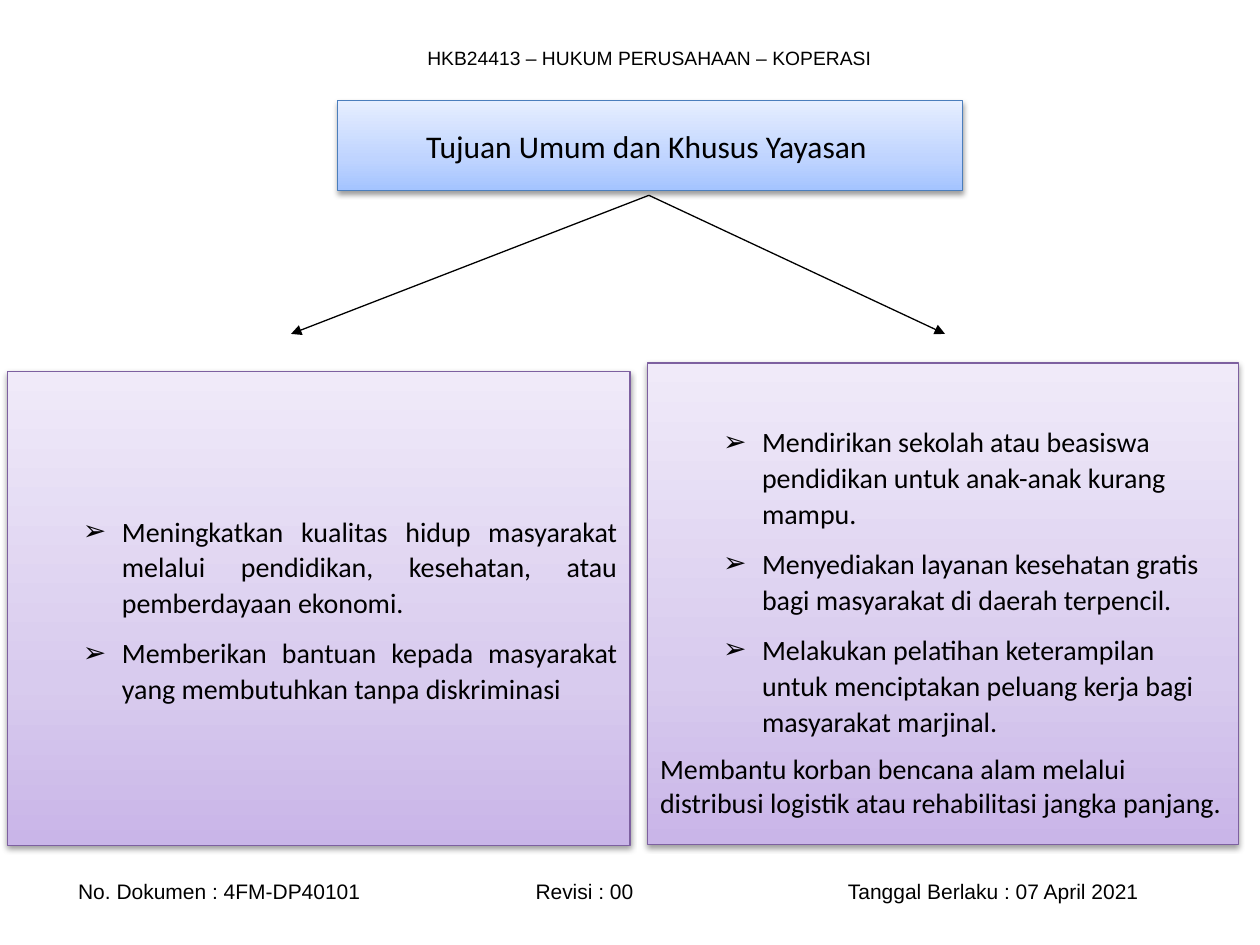
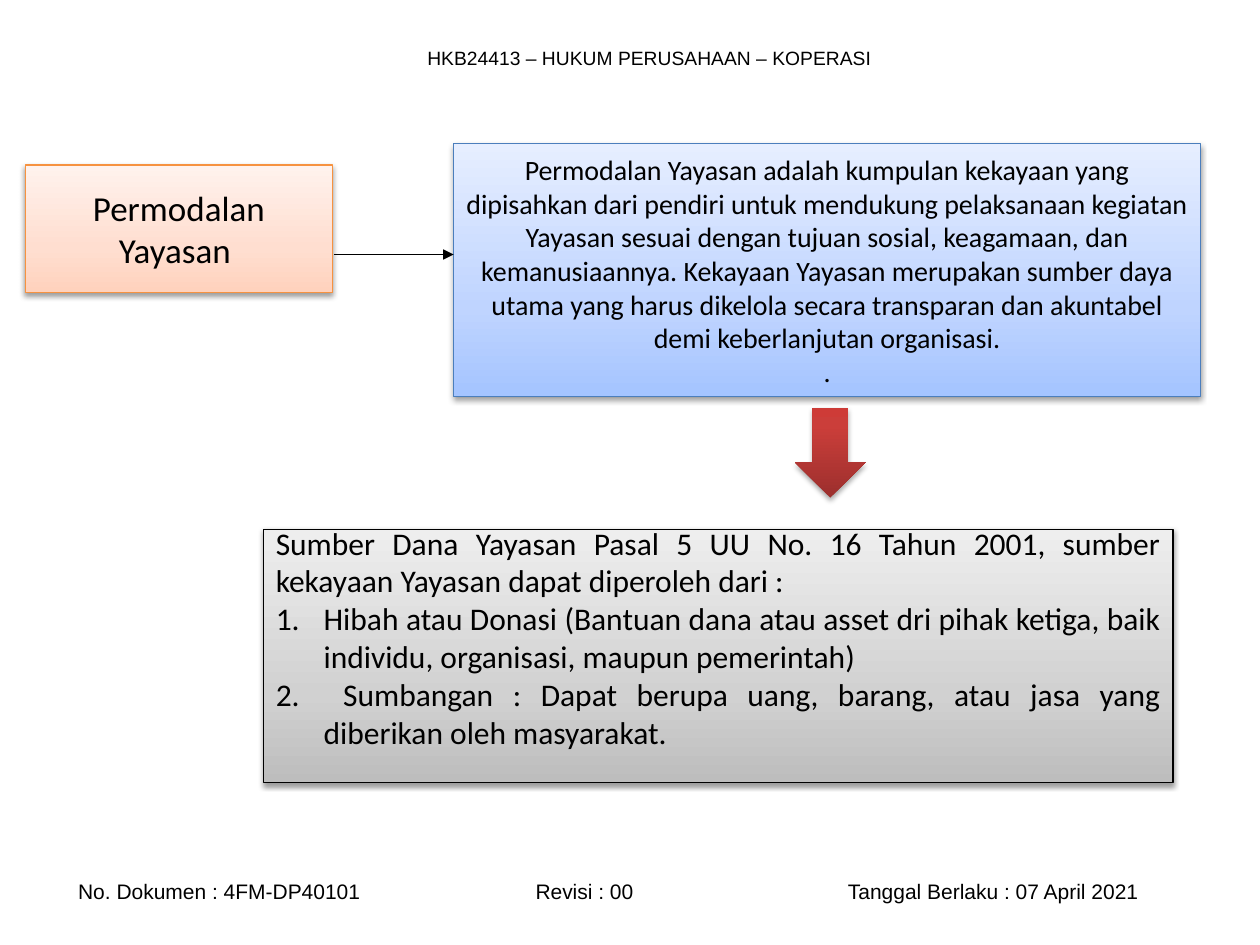
from dataclasses import dataclass
from lxml.etree import SubElement
from pptx import Presentation
from pptx.dml.color import RGBColor
from pptx.enum.shapes import MSO_CONNECTOR, MSO_SHAPE
from pptx.enum.text import MSO_ANCHOR, PP_ALIGN
from pptx.oxml.ns import qn
from pptx.util import Pt

PX = 9144
WIDE, HIGH = 1000, 750


@dataclass(frozen=True)
class Theme:
    ink: str = "000000"
    blue: tuple = ("4B7EBC", ((0, "A4C4FF"), (35, "BFD4FF"), (100, "E6EEFF")))
    mauve: tuple = ("7D60A0", ((0, "C9B5E8"), (35, "D8CBEE"), (100, "F0EAF9")))
    peach: tuple = ("F69240", ((0, "FFD2BD"), (35, "FFDED0"), (100, "FFF2ED")))
    gray: tuple = ("000000", ((0, "BDBDBD"), (35, "D1D1D1"), (100, "EEEEEE")))
    red: tuple = (None, ((0, "9C2F2D"), (80, "CB3E3A"), (100, "CE3B37")))
    body: str = "Calibri"
    band: str = "Arial"
    head: int = 11
    foot: int = 12
    text: int = 16
    title: int = 18
    topic: int = 20
    line: float = 0.75


T = Theme()
LEFT, MID, JUST = PP_ALIGN.LEFT, PP_ALIGN.CENTER, PP_ALIGN.JUSTIFY
RECT, DOWN = MSO_SHAPE.RECTANGLE, MSO_SHAPE.DOWN_ARROW

HEADER = "HKB24413 – HUKUM PERUSAHAAN – KOPERASI"
FOOTER = ("No. Dokumen : 4FM-DP40101", "Revisi : 00", "Tanggal Berlaku : 07 April 2021")
STOPS = (363, 611)

SLIDES = [
    {
        "boxes": [
            dict(area=(268, 80, 496, 71), look=T.blue, size=T.title, align=MID,
                 lines=[("", "Tujuan Umum dan Khusus Yayasan ")]),
            dict(area=(6, 295, 494, 376), look=T.mauve, size=T.text, align=JUST, lines=[
                ("➢", "Meningkatkan kualitas hidup masyarakat melalui pendidikan, kesehatan, "
                      "atau pemberdayaan ekonomi."),
                ("➢", "Memberikan bantuan kepada masyarakat yang membutuhkan tanpa diskriminasi"),
            ]),
            dict(area=(514, 288, 469, 382), look=T.mauve, size=T.text, align=LEFT, top=32, lines=[
                ("➢", "Mendirikan sekolah atau beasiswa pendidikan untuk anak-anak kurang mampu."),
                ("➢", "Menyediakan layanan kesehatan gratis bagi masyarakat di daerah terpencil."),
                ("➢", "Melakukan pelatihan keterampilan untuk menciptakan peluang kerja bagi "
                      "masyarakat marjinal."),
                ("", "Membantu korban bencana alam melalui distribusi logistik atau rehabilitasi "
                     "jangka panjang."),
            ]),
        ],
        "arrows": [(515, 155, 231, 265), (515, 155, 750, 265)],
    },
    {
        "boxes": [
            dict(area=(20, 131, 244, 101), look=T.peach, size=T.topic, align=MID,
                 lines=[("", "Permodalan Yayasan ")]),
            dict(area=(360, 114, 593, 201), look=T.blue, size=T.text, align=MID, lines=[
                ("", "Permodalan Yayasan adalah kumpulan kekayaan yang dipisahkan dari pendiri "
                     "untuk mendukung pelaksanaan kegiatan Yayasan sesuai dengan tujuan sosial, "
                     "keagamaan, dan kemanusiaannya. Kekayaan Yayasan merupakan sumber daya utama "
                     "yang harus dikelola secara transparan dan akuntabel demi keberlanjutan "
                     "organisasi."),
                ("", "."),
            ]),
            dict(area=(631, 324, 56, 71), look=T.red, kind=DOWN),
            dict(area=(209, 420, 722, 201), look=T.gray, size=T.title, align=JUST, top=0, low=30,
                 lines=[
                ("", "Sumber Dana Yayasan Pasal 5 UU No. 16 Tahun 2001, sumber kekayaan Yayasan "
                     "dapat diperoleh dari :"),
                ("1.", "Hibah atau Donasi (Bantuan dana atau asset dri pihak ketiga, baik "
                       "individu, organisasi, maupun pemerintah)"),
                ("1.", " Sumbangan : Dapat berupa uang, barang, atau jasa yang diberikan oleh "
                       "masyarakat. "),
            ]),
        ],
        "arrows": [(265, 202, 360, 202)],
    },
]


def emu(vals):
    return [v * PX for v in vals]


def style(para, size, face):
    for run in para.runs:
        run.font.size = Pt(size)
        run.font.name = face
        run.font.color.rgb = RGBColor.from_string(T.ink)


def bullet(para, mark):
    props = para._p.get_or_add_pPr()
    left, hang = (81, 31) if mark == "➢" else (38, 38)
    props.set("marL", str(left * PX))
    props.set("indent", str(-hang * PX))
    if mark == "➢":
        props.set("lvl", "1")
        SubElement(props, qn("a:buFont"), typeface=T.band)
        SubElement(props, qn("a:buChar"), char=mark)
        para.line_spacing = 1.07
        para.space_after = Pt(8)
    else:
        SubElement(props, qn("a:buFont"), typeface=T.body)
        SubElement(props, qn("a:buAutoNum"), type="arabicPeriod")


def tint(node, tag, color):
    return SubElement(SubElement(node, qn(tag)) if tag else node, qn("a:srgbClr"), val=color)


def paint(shape, look):
    edge, blend = look
    shape.fill.gradient()
    shape.fill.gradient_angle = 90
    props = shape._element.spPr
    stops = props.find(qn("a:gradFill")).find(qn("a:gsLst"))
    stops.clear()
    for pos, color in blend:
        tint(SubElement(stops, qn("a:gs"), pos=str(pos * 1000)), None, color)
    if edge:
        shape.line.color.rgb = RGBColor.from_string(edge)
        shape.line.width = Pt(T.line)
    else:
        shape.line.fill.background()
    shape.shadow.inherit = False
    cast = SubElement(props.find(qn("a:effectLst")), qn("a:outerShdw"), blurRad="40000",
                      dist="20000" if edge else "23000", dir="5400000", rotWithShape="0")
    SubElement(tint(cast, None, T.ink), qn("a:alpha"), val="38000" if edge else "35000")


def add_box(slide, area, look, size=T.text, align=MID, lines=(), top=5, low=5, kind=RECT):
    shape = slide.shapes.add_shape(kind, *emu(area))
    paint(shape, look)
    frame = shape.text_frame
    frame.word_wrap = True
    frame.vertical_anchor = MSO_ANCHOR.MIDDLE
    frame.margin_top, frame.margin_bottom = emu((top, low))
    for num, (mark, words) in enumerate(lines):
        para = frame.add_paragraph() if num else frame.paragraphs[0]
        para.text = words
        para.alignment = align
        if mark:
            bullet(para, mark)
        style(para, size, T.body)


def add_arrow(slide, ends):
    link = slide.shapes.add_connector(MSO_CONNECTOR.STRAIGHT, *emu(ends))
    link.line.color.rgb = RGBColor.from_string(T.ink)
    link.line.width = Pt(T.line)
    SubElement(link.line._get_or_add_ln(), qn("a:tailEnd"), type="triangle")
    SubElement(link._element.spPr, qn("a:effectLst"))


def add_band(slide, area, words, size, align, inset=10, stops=()):
    frame = slide.shapes.add_textbox(*emu(area)).text_frame
    frame.word_wrap = True
    frame.vertical_anchor = MSO_ANCHOR.MIDDLE
    frame.margin_left = inset * PX
    para = frame.paragraphs[0]
    para.text = words
    para.alignment = align
    if stops:
        tabs = SubElement(para._p.get_or_add_pPr(), qn("a:tabLst"))
        for stop in stops:
            SubElement(tabs, qn("a:tab"), pos=str(stop * PX), algn="l")
    style(para, size, T.band)


def main():
    deck = Presentation()
    deck.slide_width, deck.slide_height = emu((WIDE, HIGH))
    for page in SLIDES:
        slide = deck.slides.add_slide(deck.slide_layouts[6])
        add_band(slide, (98, 31, 835, 29), HEADER, T.head, MID)
        add_band(slide, (20, 692, 945, 30), "\t".join(FOOTER), T.foot, LEFT, 42, STOPS)
        for box in page["boxes"]:
            add_box(slide, **box)
        for ends in page["arrows"]:
            add_arrow(slide, ends)
    deck.save("out.pptx")


if __name__ == "__main__":
    main()
